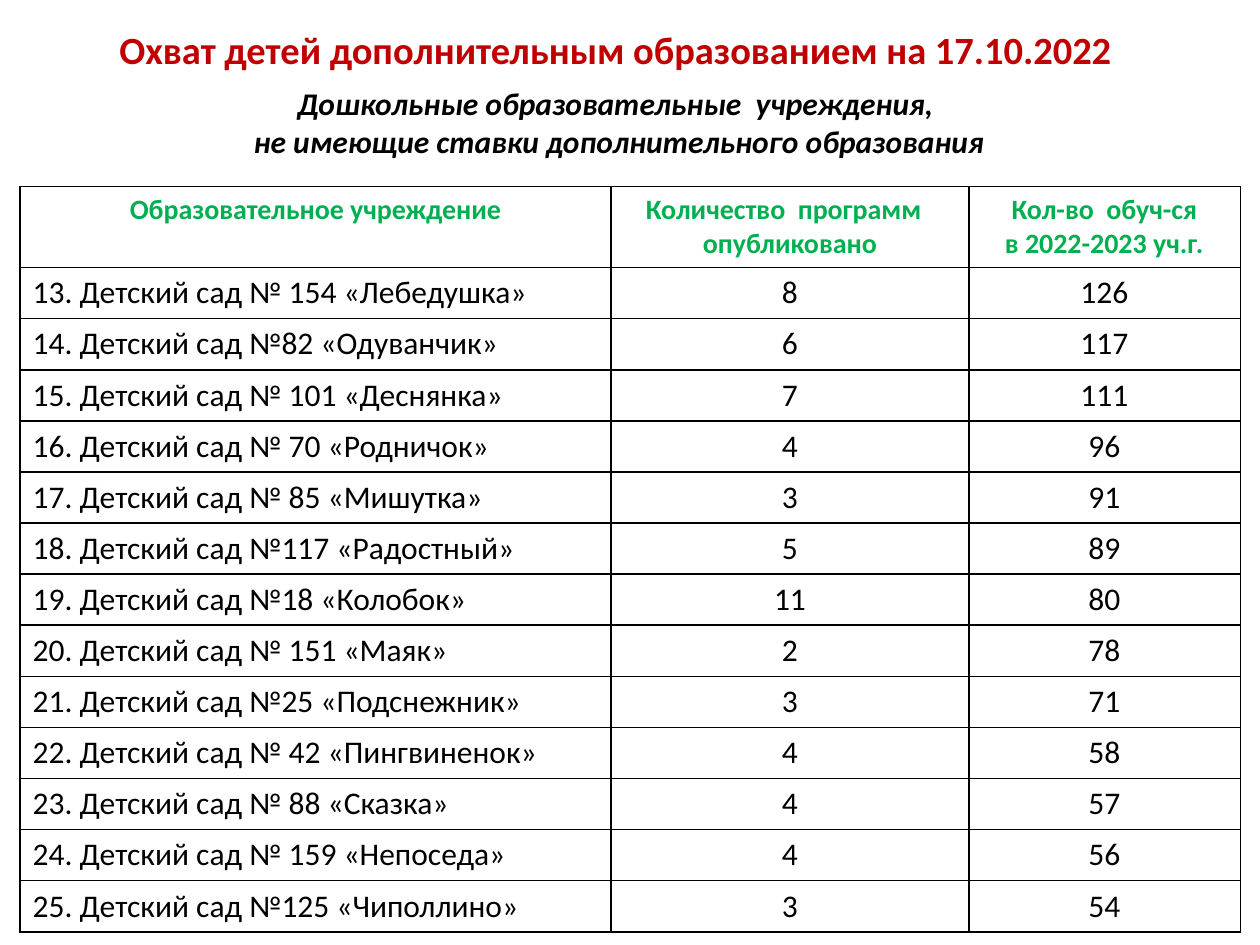
from dataclasses import dataclass

from lxml import etree
from pptx import Presentation
from pptx import util as u
from pptx.dml.color import RGBColor
from pptx.enum import text
from pptx.oxml.ns import qn


@dataclass(frozen=True)
class Theme:
    font: str = "Calibri"
    title_color: str = "C00000"
    header_color: str = "00B050"
    ink: str = "000000"
    title_size: int = 22
    header_size: int = 16
    body_size: int = 18
    border: float = 1
    outer_border: float = 0.25


THEME = Theme()

TITLE = ["Охват детей дополнительным образованием на 17.10.2022 "]
SUBTITLE = [
    "Дошкольные образовательные  учреждения,",
    " не имеющие ставки дополнительного образования",
]
HEADERS = [
    ["Образовательное учреждение"],
    ["Количество  программ  ", "опубликовано"],
    ["Кол-во  обуч-ся", "в 2022-2023 уч.г."],
]
FIRST_NUMBER = 13
KINDERGARTENS = [
    ("№ 154 «Лебедушка»", 8, 126),
    ("№82 «Одуванчик»", 6, 117),
    ("№ 101 «Деснянка»", 7, 111),
    ("№ 70 «Родничок»", 4, 96),
    ("№ 85 «Мишутка»", 3, 91),
    ("№117 «Радостный»", 5, 89),
    ("№18 «Колобок»", 11, 80),
    ("№ 151 «Маяк»", 2, 78),
    ("№25 «Подснежник»", 3, 71),
    ("№ 42 «Пингвиненок»", 4, 58),
    ("№ 88 «Сказка»", 4, 57),
    ("№ 159 «Непоседа»", 4, 56),
    ("№125 «Чиполлино»", 3, 54),
]
COLUMN_WIDTHS = [4.69, 2.84, 2.15]
HEADER_HEIGHT, ROW_HEIGHT = 0.64, 0.4


def write_lines(frame, lines, size, color, bold=False, italic=False, centered=True):
    """Write one paragraph for each line."""
    for index, line in enumerate(lines):
        paragraph = frame.paragraphs[0] if index == 0 else frame.add_paragraph()
        paragraph.alignment = text.PP_ALIGN.CENTER if centered else text.PP_ALIGN.LEFT
        run = paragraph.add_run()
        run.text = line
        run.font.name = THEME.font
        run.font.size = u.Pt(size)
        run.font.bold = bold
        run.font.italic = italic
        run.font.color.rgb = RGBColor.from_string(color)


def add_heading(slide, box, lines, size, color, italic=False):
    shape = slide.shapes.add_textbox(*map(u.Inches, box))
    frame = shape.text_frame
    frame.word_wrap = True
    frame.auto_size = text.MSO_AUTO_SIZE.SHAPE_TO_FIT_TEXT
    write_lines(frame, lines, size, color, bold=True, italic=italic)


def set_borders(cell, right_width):
    """Draw the four cell borders, which come before the fill in the XML."""
    properties = cell._tc.get_or_add_tcPr()
    widths = {"a:lnL": THEME.border, "a:lnR": right_width,
              "a:lnT": THEME.border, "a:lnB": THEME.border}
    for index, (tag, width) in enumerate(widths.items()):
        line = etree.Element(qn(tag), w=str(u.Pt(width)))
        fill = etree.SubElement(line, qn("a:solidFill"))
        etree.SubElement(fill, qn("a:srgbClr"), val=THEME.ink)
        properties.insert(index, line)


def add_coverage_table(slide, box):
    rows = [HEADERS] + [
        [[f"{number}. Детский сад {name}"], [str(programs)], [str(children)]]
        for number, (name, programs, children) in enumerate(KINDERGARTENS, FIRST_NUMBER)
    ]
    last_column = len(COLUMN_WIDTHS) - 1
    table = slide.shapes.add_table(
        len(rows), len(COLUMN_WIDTHS), *map(u.Inches, box)).table
    for column, width in zip(table.columns, COLUMN_WIDTHS):
        column.width = u.Inches(width)

    for row_index, row in enumerate(rows):
        is_header = row_index == 0
        table.rows[row_index].height = u.Inches(HEADER_HEIGHT if is_header else ROW_HEIGHT)
        for column_index, lines in enumerate(row):
            cell = table.cell(row_index, column_index)
            cell.fill.background()
            set_borders(cell, THEME.outer_border if column_index == last_column
                        else THEME.border)
            write_lines(
                cell.text_frame, lines,
                THEME.header_size if is_header else THEME.body_size,
                THEME.header_color if is_header else THEME.ink,
                bold=is_header, centered=is_header or column_index > 0)


def main():
    presentation = Presentation()
    presentation.slide_width = u.Inches(10)
    presentation.slide_height = u.Inches(7.5)
    slide = presentation.slides.add_slide(presentation.slide_layouts[6])

    # Table
    add_coverage_table(slide, (0.16, 1.48, sum(COLUMN_WIDTHS),
                               HEADER_HEIGHT + ROW_HEIGHT * len(KINDERGARTENS)))
    # Title and subtitle
    add_heading(slide, (0, 0.16, 9.84, 0.47), TITLE, THEME.title_size, THEME.title_color)
    add_heading(slide, (1.02, 0.62, 7.73, 0.71), SUBTITLE, THEME.body_size, THEME.ink,
                italic=True)

    presentation.save("out.pptx")


if __name__ == "__main__":
    main()
